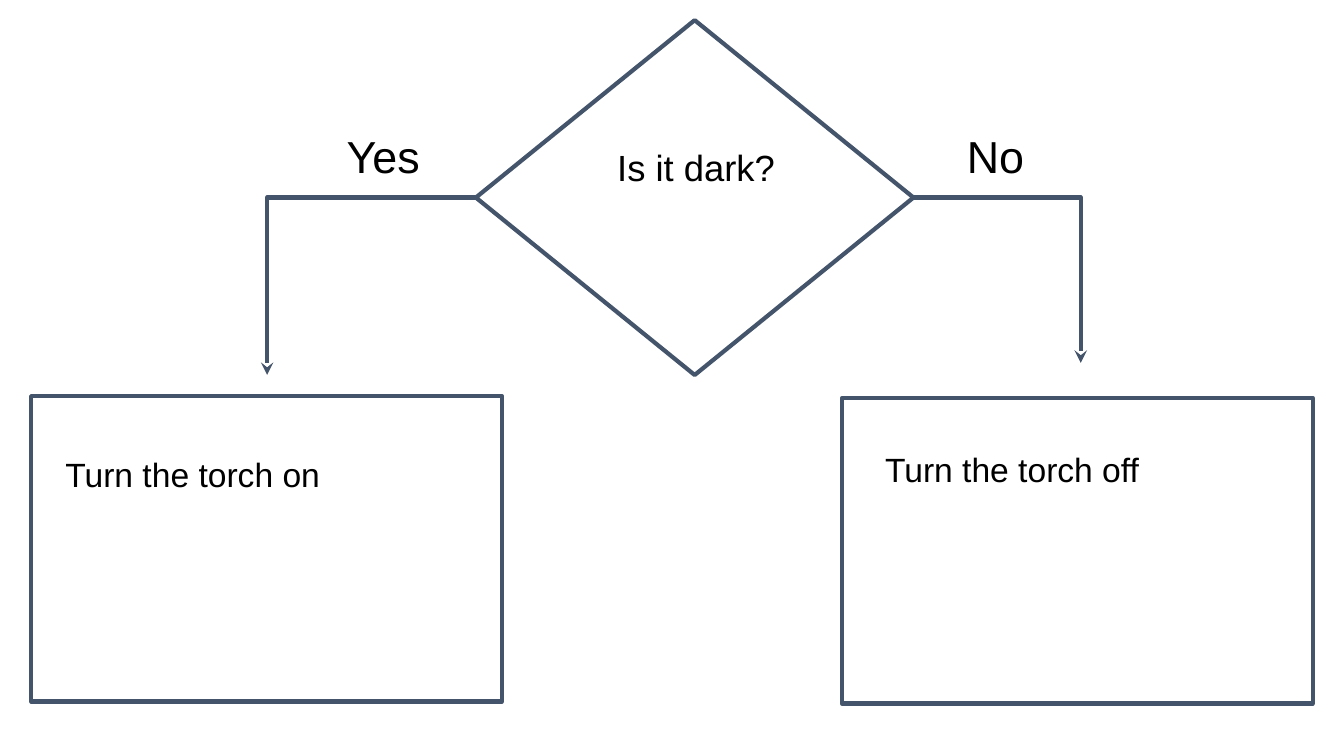
from lxml.etree import SubElement
from pptx import Presentation
from pptx.dml.color import RGBColor
from pptx.enum.shapes import MSO_CONNECTOR, MSO_SHAPE
from pptx.enum.text import MSO_ANCHOR, PP_ALIGN
from pptx.oxml.ns import qn
from pptx.util import Emu, Pt

PX = 9144  # 100 px to the inch
SLATE = "44546A"
FRAME = dict(word_wrap=True, vertical_anchor=MSO_ANCHOR.TOP,
             margin_left=Emu(10 * PX), margin_right=Emu(10 * PX),
             margin_top=Emu(14 * PX), margin_bottom=Emu(10 * PX))


def px(*lengths):
    return [Emu(length * PX) for length in lengths]


def color(hex_value):
    return RGBColor.from_string(hex_value)


def apply(target, values):
    for key, value in values.items():
        setattr(target, key, value)


def add_outline(slide, kind, box):
    outline = slide.shapes.add_shape(kind, *px(*box))
    outline.shadow.inherit = False
    outline.fill.background()
    outline.line.color.rgb = color(SLATE)
    outline.line.width = Pt(3)


def add_label(slide, wording, box, size, align=PP_ALIGN.LEFT):
    frame = slide.shapes.add_textbox(*px(*box)).text_frame
    apply(frame, FRAME)
    paragraph = frame.paragraphs[0]
    paragraph.alignment = align
    run = paragraph.add_run()
    run.text = wording
    apply(run.font, dict(name="Arial", size=Pt(size)))
    run.font.color.rgb = color("000000")


def add_branch(slide, start, end, answer, answer_box):
    """Arrow that runs sideways, then down, with its answer above."""
    arrow = slide.shapes.add_connector(MSO_CONNECTOR.ELBOW, *px(*start, *end))
    arrow.line.color.rgb = color(SLATE)
    arrow.line.width = Pt(3)
    properties = arrow.element.spPr
    properties.find(qn("a:prstGeom")).set("prst", "bentConnector2")
    SubElement(properties.find(qn("a:ln")), qn("a:tailEnd"), type="stealth")
    SubElement(properties, qn("a:effectLst"))
    add_label(slide, answer, answer_box, 32)


def add_decision(slide, box):
    left, top, width, height = box
    add_outline(slide, MSO_SHAPE.DIAMOND, box)
    add_label(slide, "Is it dark?", (left + 93, top + 110, 251, 123), 26,
              PP_ALIGN.CENTER)

    # Branches leave from the side corners
    middle = top + height // 2
    right = left + width
    add_branch(slide, (left, middle), (left - 207, middle + 176),
               "Yes", (left - 138, top + 94, 117, 62))
    add_branch(slide, (right, middle), (right + 166, middle + 164),
               "No", (right + 43, top + 94, 95, 62))


def add_action(slide, wording, box, text_offset):
    left, top = box[:2]
    add_outline(slide, MSO_SHAPE.RECTANGLE, box)
    add_label(slide, wording,
              (left + text_offset[0], top + text_offset[1], 400, 226), 24)


def main():
    presentation = Presentation()
    presentation.slide_width, presentation.slide_height = px(1333, 750)
    slide = presentation.slides.add_slide(presentation.slide_layouts[6])

    # Question with its two answers
    add_decision(slide, (472, 20, 434, 352))

    # Outcomes
    add_action(slide, "Turn the torch on", (31, 393, 467, 303), (24, 43))
    add_action(slide, "Turn the torch off", (835, 395, 467, 303), (33, 36))

    presentation.save("out.pptx")


if __name__ == "__main__":
    main()
